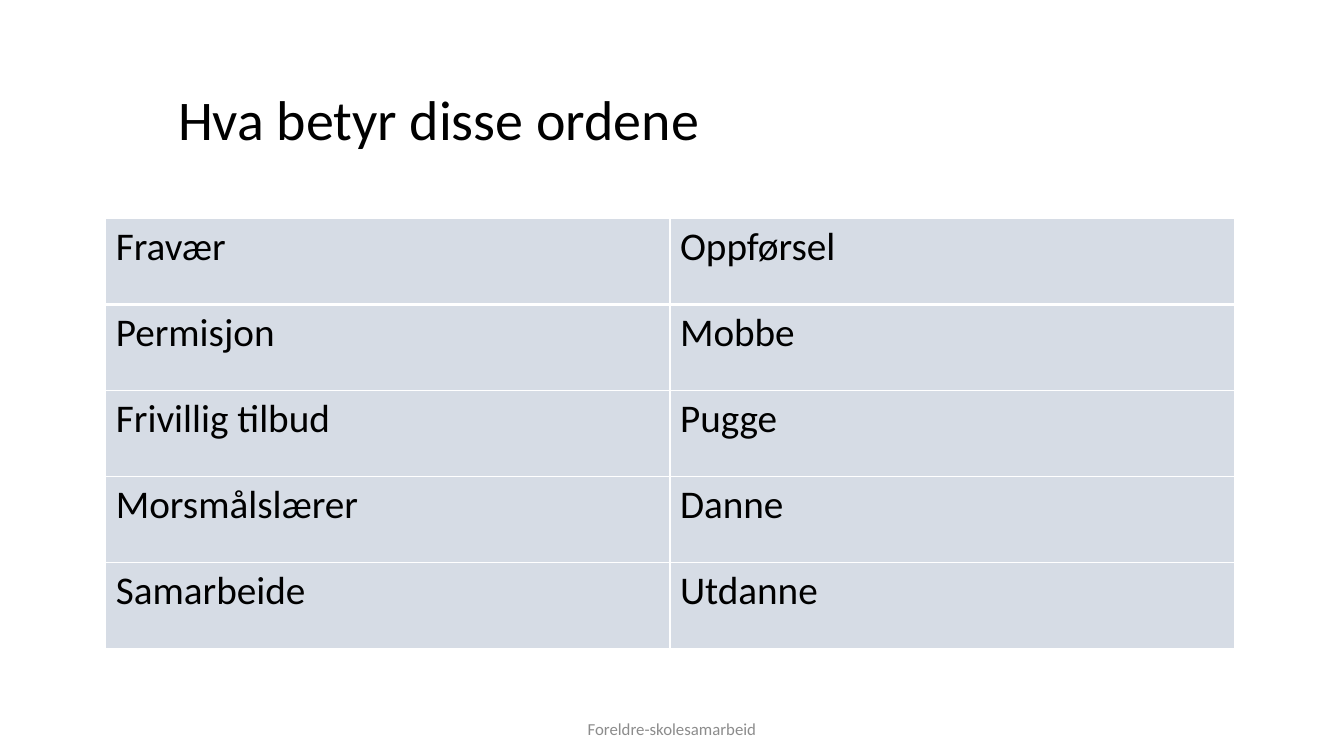
from pptx import Presentation
from pptx.dml.color import RGBColor
from pptx.enum.text import MSO_ANCHOR, MSO_AUTO_SIZE, PP_ALIGN
from pptx.oxml.ns import qn
from pptx.util import Pt
from lxml import etree

# Content
TITLE = "Hva betyr disse ordene"
WORDS = [
    ("Fravær", "Oppførsel"),
    ("Permisjon", "Mobbe"),
    ("Frivillig tilbud", "Pugge"),
    ("Morsmålslærer", "Danne"),
    ("Samarbeide", "Utdanne"),
]
FOOTER = "Foreldre-skolesamarbeid"

# Format
FONT = "Calibri"
BLACK = RGBColor(0x00, 0x00, 0x00)
WHITE = RGBColor(0xFF, 0xFF, 0xFF)
GREY = RGBColor(0x8C, 0x8C, 0x8C)
CELL_FILL = RGBColor(0xD6, 0xDC, 0xE5)
LEFT, CENTER = PP_ALIGN.LEFT, PP_ALIGN.CENTER
TOP, MIDDLE = MSO_ANCHOR.TOP, MSO_ANCHOR.MIDDLE
NO_AUTOFIT = MSO_AUTO_SIZE.NONE

# Layout in points
TABLE_LEFT, TABLE_TOP = 75.6, 156
COLUMN_WIDTH, ROW_HEIGHT = 403, 61.45
THIN, THICK = 1, 3


def write_text(frame, text, size, color=BLACK, align=LEFT):
    para = frame.paragraphs[0]
    para.alignment = align
    span = para.add_run()
    span.text = text
    span.font.name = FONT
    span.font.size = Pt(size)
    span.font.color.rgb = color


def set_borders(cell, top, bottom):
    properties = cell._tc.get_or_add_tcPr()
    widths = {"a:lnL": THIN, "a:lnR": THIN, "a:lnT": top, "a:lnB": bottom}
    for tag, width in widths.items():
        line = etree.SubElement(properties, qn(tag), w=str(Pt(width)))
        fill = etree.SubElement(line, qn("a:solidFill"))
        etree.SubElement(fill, qn("a:srgbClr"), val=str(WHITE))


deck = Presentation()
deck.slide_width, deck.slide_height = Pt(960), Pt(540)
page = deck.slides.add_slide(deck.slide_layouts[5])

# Title
title = page.shapes.title
title.left, title.top, title.width, title.height = Pt(120), Pt(57), Pt(646), Pt(55.5)
title.text_frame.auto_size = NO_AUTOFIT
title.text_frame.vertical_anchor = TOP
write_text(title.text_frame, TITLE, 40)

# Word table
row_count, column_count = len(WORDS), len(WORDS[0])
table = page.shapes.add_table(
    row_count, column_count, Pt(TABLE_LEFT), Pt(TABLE_TOP),
    Pt(column_count * COLUMN_WIDTH), Pt(row_count * ROW_HEIGHT)).table
for column in table.columns:
    column.width = Pt(COLUMN_WIDTH)
for row_index, row_words in enumerate(WORDS):
    table.rows[row_index].height = Pt(ROW_HEIGHT)
    for column_index, word in enumerate(row_words):
        cell = table.cell(row_index, column_index)
        write_text(cell.text_frame, word, 28)
        cell.text_frame.paragraphs[0].runs[0].font.bold = False
        set_borders(cell, top=THICK if row_index == 1 else THIN,
                    bottom=THICK if row_index == 0 else THIN)
        cell.fill.solid()
        cell.fill.fore_color.rgb = CELL_FILL

# Footer
footer = page.shapes.add_textbox(Pt(318), Pt(506), Pt(324), Pt(29))
footer.text_frame.word_wrap = True
footer.text_frame.vertical_anchor = MIDDLE
write_text(footer.text_frame, FOOTER, 12, color=GREY, align=CENTER)

deck.save("out.pptx")
